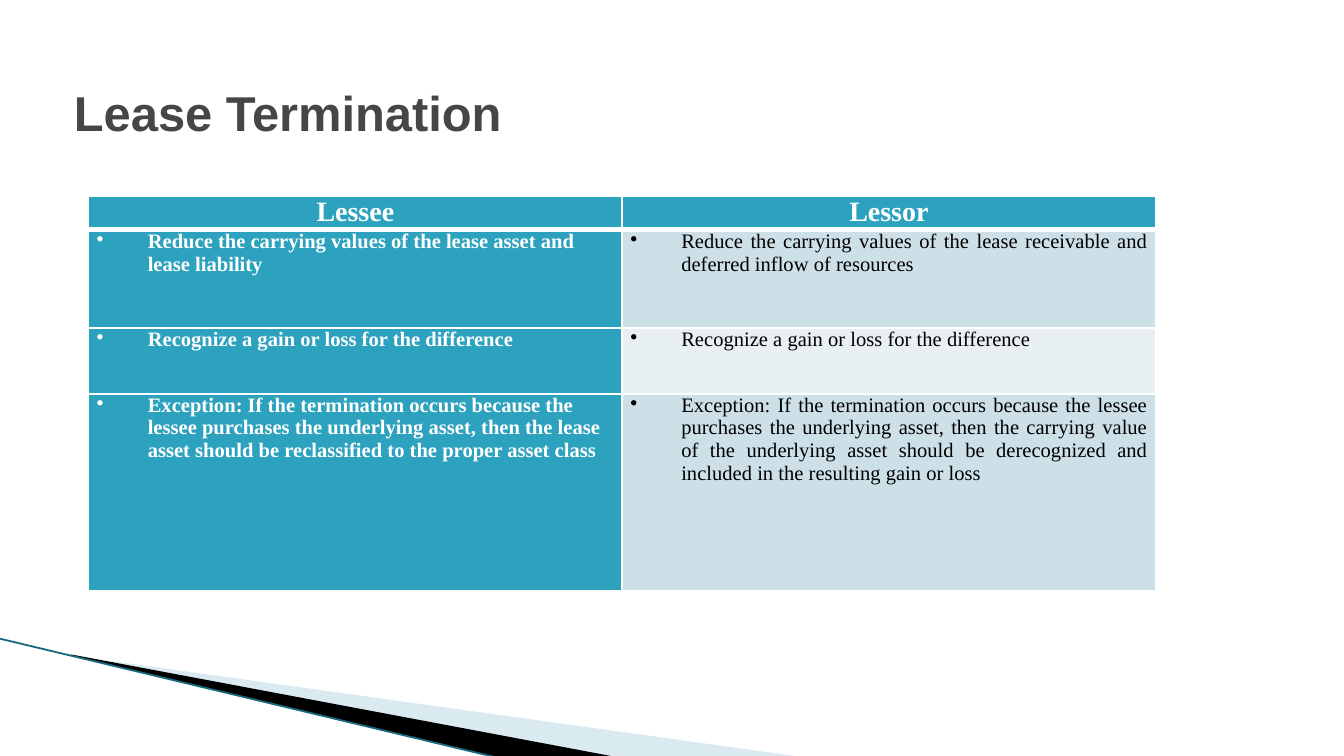
import pptx
import pptx.dml.color
import pptx.enum.text
import pptx.oxml
import pptx.oxml.ns
import pptx.util

ALIGN = pptx.enum.text.PP_ALIGN
ANCHOR = pptx.enum.text.MSO_ANCHOR
WHITE, BLACK, TEAL = "FFFFFF", "000000", "2DA2BF"
HEADERS = ["Lessee", "Lessor"]
RULES = [
    ("Reduce the carrying values of the lease asset and lease liability",
     "Reduce the carrying values of the lease receivable and deferred inflow of resources"),
    ("Recognize a gain or loss for the difference",
     "Recognize a gain or loss for the difference"),
    ("Exception: If the termination occurs because the lessee purchases the underlying asset, "
     "then the lease asset should be reclassified to the proper asset class",
     "Exception: If the termination occurs because the lessee purchases the underlying asset, "
     "then the carrying value of the underlying asset should be derecognized and included in "
     "the resulting gain or loss"),
]


def color(value):
    return pptx.dml.color.RGBColor.from_string(value)


def grid(*steps):
    """Turn steps of a tenth-inch grid into lengths."""
    return [pptx.util.Inches(step / 10) for step in steps]


def apply(target, values):
    for name, value in values.items():
        setattr(target, name, value)


def add_xml(parent, tag, content="", **attributes):
    listed = " ".join(f'{name}="{value}"' for name, value in attributes.items())
    namespace = pptx.oxml.ns.nsdecls("a")
    element = pptx.oxml.parse_xml(f"<a:{tag} {namespace} {listed}>{content}</a:{tag}>")
    parent.append(element)


class LeaseSlide:
    body_font = "Times New Roman"
    insets = dict(zip(("margin_left", "margin_top", "margin_right", "margin_bottom"),
                      grid(0.6, 0, 0.6, 0)))

    def __init__(self, presentation):
        self.slide = presentation.slides.add_slide(presentation.slide_layouts[5])

    def set_text(self, paragraph, text, size, shade, bold, name):
        paragraph.text = text
        apply(paragraph.font, {"size": pptx.util.Pt(size), "bold": bold, "name": name})
        paragraph.font.color.rgb = color(shade)

    def title(self, text, *place):
        shape = self.slide.shapes.title
        apply(shape, dict(zip(("left", "top", "width", "height"), grid(*place))))
        frame = shape.text_frame
        apply(frame, {"margin_left": 0, "margin_top": 0, "margin_right": 0, "margin_bottom": 0,
                      "vertical_anchor": ANCHOR.BOTTOM, "word_wrap": True,
                      "auto_size": pptx.enum.text.MSO_AUTO_SIZE.NONE})
        frame.paragraphs[0].alignment = ALIGN.LEFT
        self.set_text(frame.paragraphs[0], text, 26.2, "464646", True, "Arial")

    def wedge(self, points, fill, opacity=100):
        start, *others = [grid(*point) for point in points]
        builder = self.slide.shapes.build_freeform(*start)
        builder.add_line_segments(others, close=True)
        shape = builder.convert_to_shape()
        shape.shadow.inherit = False
        shape.line.fill.background()
        shape.fill.solid()
        shape.fill.fore_color.rgb = color(fill)
        if opacity < 100:
            shade = shape._element.spPr.find(".//" + pptx.oxml.ns.qn("a:srgbClr"))
            add_xml(shade, "alpha", val=opacity * 1000)

    def line(self, start, end, shade, width):
        connector = self.slide.shapes.add_connector(1, *grid(*start, *end))
        connector.line.color.rgb = color(shade)
        connector.line.width = pptx.util.Pt(width)
        add_xml(connector._element.spPr, "effectLst")

    def cell(self, cell, text, fill, shade, size, bold, alignment, bullet, borders):
        apply(cell, self.insets)
        properties = cell._tc.get_or_add_tcPr()
        for side, width in borders.items():
            add_xml(properties, "ln" + side,
                    f'<a:solidFill><a:srgbClr val="{WHITE}"/></a:solidFill>',
                    w=pptx.util.Pt(width))
        cell.fill.solid()
        cell.fill.fore_color.rgb = color(fill)
        paragraph = cell.text_frame.paragraphs[0]
        if bullet:
            indent, = grid(3.8)
            layout = paragraph._p.get_or_add_pPr()
            layout.set("marL", str(indent))
            layout.set("indent", str(-indent))
            add_xml(layout, "buChar", char="•")
        paragraph.alignment = alignment
        self.set_text(paragraph, text, size, shade, bold, self.body_font)

    def table(self, left, top, columns, rows):
        frame = self.slide.shapes.add_table(
            len(rows), len(columns), *grid(left, top, sum(columns), sum(rows)))
        table = frame.table
        for column, width in zip(table.columns, grid(*columns)):
            column.width = width
        for row, height in zip(table.rows, grid(*rows)):
            row.height = height
        # Header row, set off by a thick rule
        for index, text in enumerate(HEADERS):
            self.cell(table.cell(0, index), text, TEAL, WHITE, 15, True, ALIGN.CENTER, False,
                      {"L": 1, "R": 1, "T": 1, "B": 3})
        # Lessee column is solid, lessor column is banded
        for index, (lessee, lessor) in enumerate(RULES, 1):
            borders = {"L": 1, "R": 1, "T": 3 if index == 1 else 1, "B": 1}
            band = "CDE0E8" if index % 2 else "E8F0F4"
            self.cell(table.cell(index, 0), lessee, TEAL, WHITE, 11, True, ALIGN.LEFT, True,
                      borders)
            self.cell(table.cell(index, 1), lessor, band, BLACK, 11, False, ALIGN.JUSTIFY, True,
                      borders)


def main():
    presentation = pptx.Presentation()
    apply(presentation, dict(zip(("slide_width", "slide_height"), grid(100, 56.25))))
    page = LeaseSlide(presentation)
    # Corner decoration
    page.wedge([(5.5, 48.8), (59.5, 56.3), (45.6, 56.3)], "A0CBDC", opacity=40)
    page.wedge([(5.3, 48.7), (45.7, 56.3), (37.2, 56.4), (5.4, 48.8)], BLACK)
    page.line((-0.1, 47.5), (37.1, 56.4), "16697F", 0.95)
    # Heading and comparison
    page.title("Lease Termination", 5.5, 4, 85, 6.5)
    page.table(6.6, 14.6, columns=[39.7, 39.7], rows=[2.5, 7.3, 4.9, 14.7])
    presentation.save("out.pptx")


if __name__ == "__main__":
    main()
